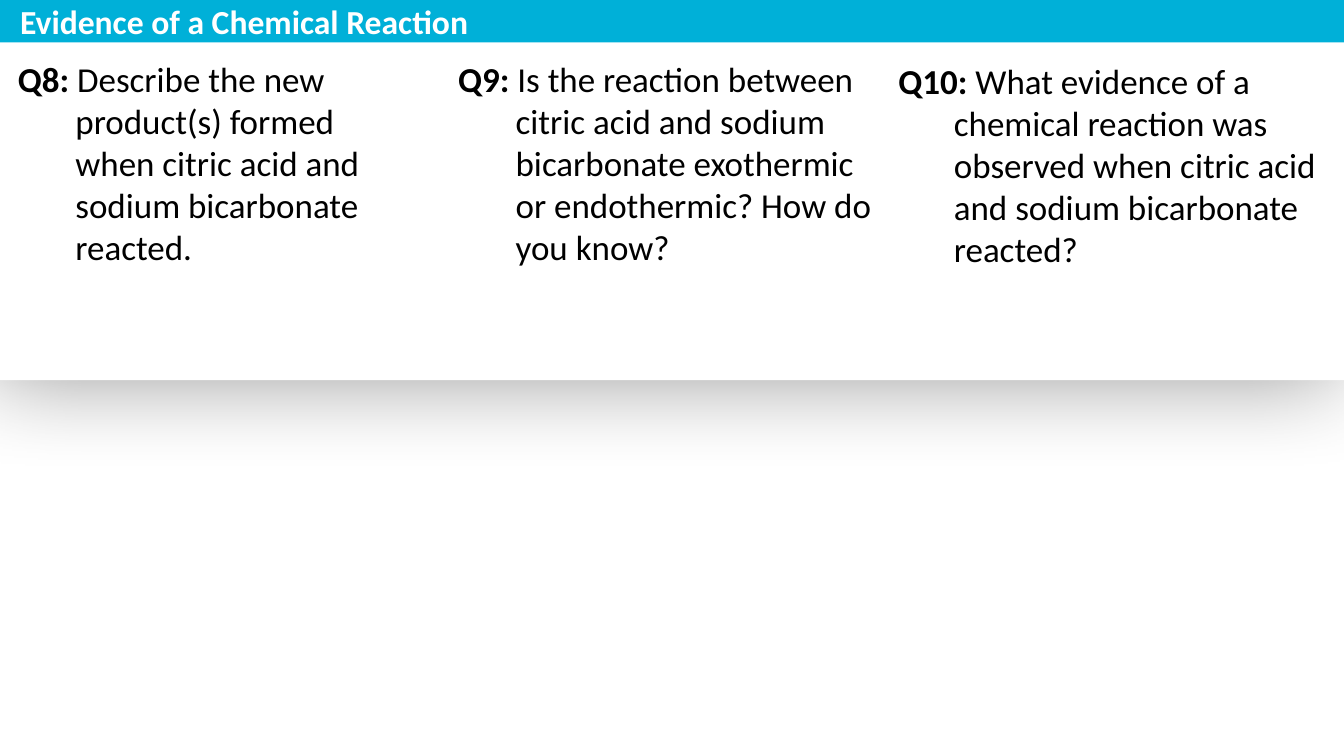
import pptx
import pptx.util
import pptx.dml.color
import pptx.enum.shapes
import pptx.enum.text
import pptx.oxml
import pptx.oxml.ns

THEME = {
    "font": "Calibri", "band": "00B0D8", "panel": "FFFFFF",
    "text": "000000", "title": "FFFFFF", "shadow": "000000",
    "title_size": 24, "text_size": 25,
}
QUESTIONS = [
    ("Q8: ", "Describe the new product(s) formed when citric acid and "
             "sodium bicarbonate reacted."),
    ("Q9: ", "Is the reaction between citric acid and sodium bicarbonate "
             "exothermic or endothermic? How do you know?"),
    ("Q10: ", "What evidence of a chemical reaction was observed when citric "
              "acid and sodium bicarbonate reacted?"),
]
# Per question: box top, width and height in percent; insets and indent in inches
BOXES = [
    (7.05, 30.61, 29.81, (0.1, 0.05), 0.57),
    (7.05, 33.53, 29.81, (0.1, 0.05), 0.57),
    (7.99, 32.03, 28.46, (0, 0), 0.55),
]
TEXT_LEFT, PITCH = 1.35, 32.75  # question columns, percent of slide width
BAND_HEIGHT = 5.69


class Deck:
    """Style and current slide; positions are percentages of the slide."""

    def __init__(self, theme):
        self.theme = theme
        self.prs = pptx.Presentation()
        self.prs.slide_width = pptx.util.Inches(13.33)
        self.prs.slide_height = pptx.util.Inches(7.38)
        self.s = self.prs.slides.add_slide(self.prs.slide_layouts[6])

    def color(self, name):
        return pptx.dml.color.RGBColor.from_string(self.theme[name])

    def place(self, x, y, w, h):
        sw, sh = self.prs.slide_width, self.prs.slide_height
        return [int(v * side / 100) for v, side in zip((x, y, w, h), (sw, sh) * 2)]

    def rect(self, box, fill):
        kind = pptx.enum.shapes.MSO_SHAPE.RECTANGLE
        sp = self.s.shapes.add_shape(kind, *self.place(*box))
        sp.shadow.inherit = False
        sp.fill.solid()
        sp.fill.fore_color.rgb = self.color(fill)
        sp.line.fill.background()
        return sp

    def soft_shadow(self, sp, alpha, blur, dist, angle):
        effects = sp._element.spPr.find(pptx.oxml.ns.qn("a:effectLst"))
        effects.append(pptx.oxml.parse_xml(
            f'<a:outerShdw {pptx.oxml.ns.nsdecls("a")} '
            f'blurRad="{pptx.util.Pt(blur)}" dist="{pptx.util.Pt(dist)}" '
            f'dir="{angle * 60000}" algn="ctr" rotWithShape="0">'
            f'<a:srgbClr val="{self.theme["shadow"]}">'
            f'<a:alpha val="{alpha * 1000}"/></a:srgbClr></a:outerShdw>'))

    def text(self, box, runs, size, color, insets, indent=0, anchor="TOP"):
        sp = self.s.shapes.add_textbox(*self.place(*box))
        tf = sp.text_frame
        side, end = (pptx.util.Inches(v) for v in insets)
        frame = {
            "word_wrap": True,
            "auto_size": pptx.enum.text.MSO_AUTO_SIZE.SHAPE_TO_FIT_TEXT,
            "vertical_anchor": pptx.enum.text.MSO_ANCHOR[anchor],
            "margin_left": side, "margin_right": side,
            "margin_top": end, "margin_bottom": end,
        }
        for name, value in frame.items():
            setattr(tf, name, value)
        p = tf.paragraphs[0]
        if indent:  # hanging indent
            pPr = p._p.get_or_add_pPr()
            hang = pptx.util.Inches(indent)
            pPr.set("marL", str(hang))
            pPr.set("indent", str(-hang))
        for words, bold in runs:
            r = p.add_run()
            r.text = words
            font = {"name": self.theme["font"], "bold": bold,
                    "size": pptx.util.Pt(self.theme[size])}
            for name, value in font.items():
                setattr(r.font, name, value)
            r.font.color.rgb = self.color(color)


def main():
    deck = Deck(THEME)

    # White question panel with its shadow
    panel = deck.rect((0, 3.66, 100, 47.43), "panel")
    deck.soft_shadow(panel, alpha=40, blur=68, dist=5, angle=180)

    # Three question columns
    for i, ((label, question), box) in enumerate(zip(QUESTIONS, BOXES)):
        top, width, height, insets, indent = box
        left = TEXT_LEFT + i * PITCH - insets[0] / 13.33 * 100
        deck.text((left, top, width, height), [(label, True), (question, False)],
                  "text_size", "text", insets, indent)

    # Title band
    band = (0, 0, 100, BAND_HEIGHT)
    deck.rect(band, "band")
    deck.text(band, [("Evidence of a Chemical Reaction", True)],
              "title_size", "title", (0.2, 0), anchor="MIDDLE")

    deck.prs.save("out.pptx")


if __name__ == "__main__":
    main()
